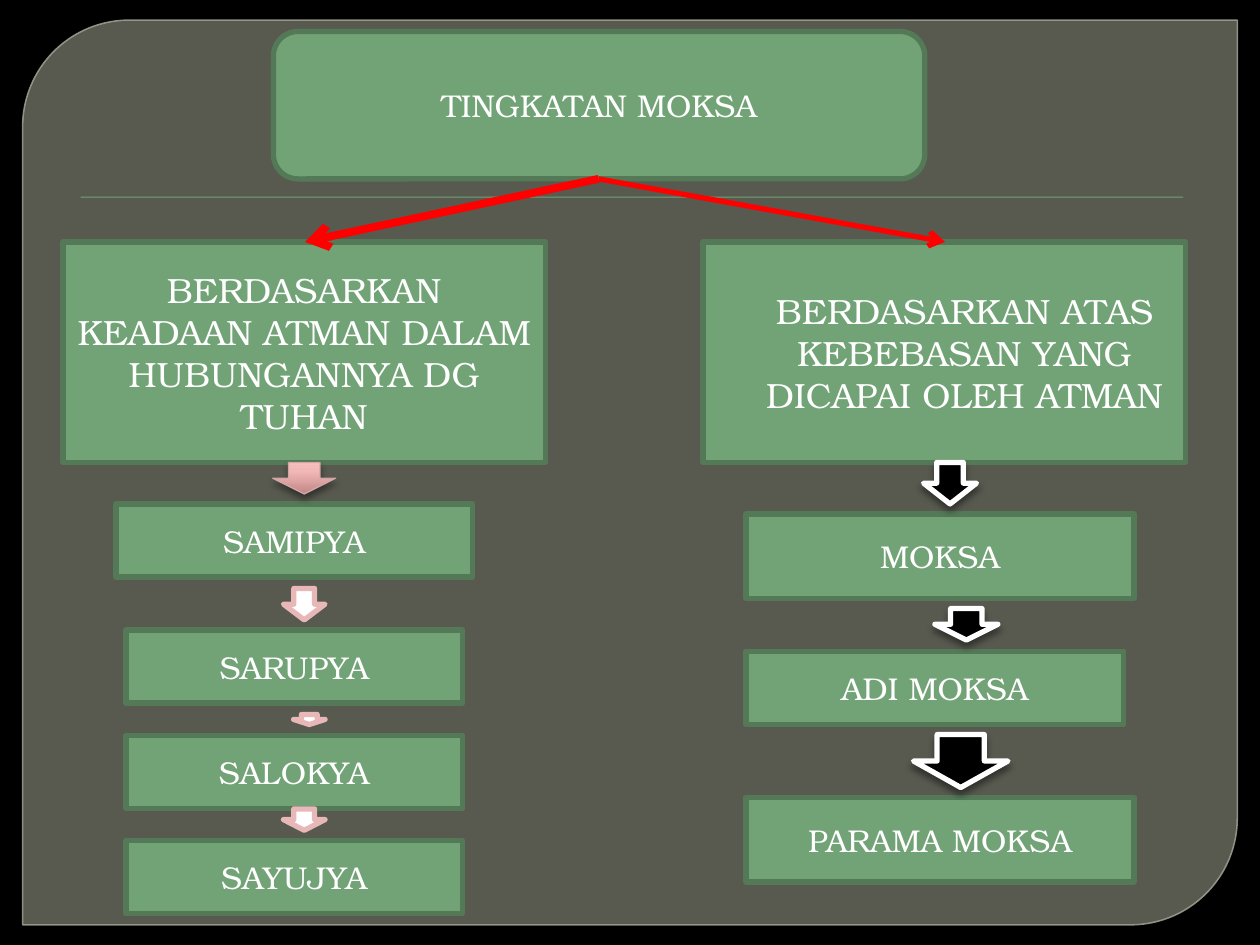
from copy import deepcopy
from dataclasses import dataclass

from pptx import Presentation
from pptx import util as u
from pptx.dml.color import RGBColor
from pptx.enum import shapes, text
from pptx.oxml import ns, xmlchemy

KIND = shapes.MSO_SHAPE


@dataclass(frozen=True)
class Theme:
    """Colours, font and type sizes of the slide."""

    backdrop: str = "000000"
    panel: str = "888B7B"
    panel_edge: str = "9DA090"
    green: str = "72A376"
    green_edge: str = "547957"
    light: str = "FFFFFF"
    dark: str = "000000"
    pink: str = "E8B7B7"
    blush_edge: str = "D3A6A6"
    blush: tuple = ((0, "C18787"), (0.72, "F2B8B8"), (1, "F7BEBE"))
    link: str = "FF0000"
    font: str = "TeX Gyre Bonum"
    heading: int = 20
    body: int = 18


THEME = Theme()


def add_child(parent, tag, **attributes):
    """Append a DrawingML element with attributes and return it."""
    child = xmlchemy.OxmlElement(tag)
    for name, value in attributes.items():
        child.set(name, str(value))
    parent.append(child)
    return child


def set_opacity(fill_parent, percent):
    """Make the solid fill under an element partly transparent."""
    color = fill_parent.find(ns.qn("a:solidFill"))[0]
    add_child(color, "a:alpha", val=percent * 1000)


def add_shadow(shape, opacity, blur, distance):
    """Cast a black shadow straight down; blur and distance are in points."""
    effects = shape.element.spPr.find(ns.qn("a:effectLst"))
    shadow = add_child(effects, "a:outerShdw", blurRad=u.Pt(blur),
                       dist=u.Pt(distance), dir=5400000, rotWithShape=0)
    color = add_child(shadow, "a:srgbClr", val=THEME.dark)
    add_child(color, "a:alpha", val=opacity * 1000)


def add_block(page, kind, box, fill, edge=None, width=3):
    """Draw a filled preset shape in a box given in inches."""
    shape = page.shapes.add_shape(kind, *map(u.Inches, box))
    shape.shadow.inherit = False
    shape.fill.solid()
    shape.fill.fore_color.rgb = RGBColor.from_string(fill)
    if edge:
        shape.line.color.rgb = RGBColor.from_string(edge)
        shape.line.width = u.Pt(width)
    else:
        shape.line.fill.background()
    return shape


def add_label(page, box, words, size=THEME.body, kind=KIND.RECTANGLE, indent=0.0):
    """Draw a green box with centred text."""
    shape = add_block(page, kind, box, THEME.green, THEME.green_edge)
    frame = shape.text_frame
    frame.word_wrap = True
    frame.vertical_anchor = text.MSO_ANCHOR.MIDDLE
    frame.margin_left = u.Inches(0.1 + indent)
    para = frame.paragraphs[0]
    para.text = words
    para.alignment = text.PP_ALIGN.CENTER
    para.font.name = THEME.font
    para.font.size = u.Pt(size)
    para.font.color.rgb = RGBColor.from_string(THEME.light)


def add_link(page, start, end, width):
    """Draw a red arrow between two points given in inches."""
    link = page.shapes.add_connector(shapes.MSO_CONNECTOR.STRAIGHT,
                                     *map(u.Inches, (*start, *end)))
    link.line.color.rgb = RGBColor.from_string(THEME.link)
    link.line.width = u.Pt(width)
    add_child(link.line._get_or_add_ln(), "a:tailEnd", type="arrow")
    add_child(link.element.spPr, "a:effectLst")


def add_blush_arrow(page, box):
    """Draw the down arrow with a pink gradient."""
    arrow = add_block(page, KIND.DOWN_ARROW, box, THEME.pink, THEME.blush_edge, 0.75)
    arrow.fill.gradient()
    arrow.fill.gradient_angle = 90
    stop_list = arrow.element.spPr.find(ns.qn("a:gradFill")).find(ns.qn("a:gsLst"))
    stop_list.append(deepcopy(stop_list[-1]))
    for stop, (position, color) in zip(arrow.fill.gradient_stops, THEME.blush):
        stop.position = position
        stop.color.rgb = RGBColor.from_string(color)
    add_shadow(arrow, 43, 4, 3)


def add_backdrop(page, box):
    """Draw the rounded panel and its rule on a black background."""
    left, top, width, _ = box
    page.background.fill.solid()
    page.background.fill.fore_color.rgb = RGBColor.from_string(THEME.backdrop)
    panel = add_block(page, KIND.ROUND_2_DIAG_RECTANGLE, box,
                      THEME.panel, THEME.panel_edge, 0.87)
    panel.adjustments[0] = 0.118
    panel.adjustments[1] = 0
    set_opacity(panel.element.spPr, 65)
    set_opacity(panel.line._get_or_add_ln(), 88)
    rule = add_block(page, KIND.RECTANGLE,
                     (left + 0.46, top + 1.4, width - 0.89, 0.01), THEME.green)
    add_shadow(rule, 75, 1, 1)


def add_states_column(page, box):
    """Draw the column of states of the atman, linked by pink arrows."""
    left, top, width, _ = box
    add_label(page, box, "BERDASARKAN KEADAAN ATMAN DALAM HUBUNGANNYA DG TUHAN",
              THEME.heading)
    add_label(page, (left + 0.42, top + 2.08, 2.83, 0.58), "SAMIPYA")
    for row, words in enumerate(("SARUPYA", "SALOKYA", "SAYUJYA")):
        add_label(page, (left + 0.5, top + 3.08 + row * 0.835, 2.67, 0.58), words)
    center = left + width / 2
    add_blush_arrow(page, (center - 0.25, top + 1.75, 0.5, 0.25))
    for shift, drop, span, height in ((0, 2.75, 0.33, 0.25),
                                      (0.04, 3.75, 0.25, 0.08),
                                      (0, 4.5, 0.33, 0.17)):
        add_block(page, KIND.DOWN_ARROW,
                  (center + shift - span / 2, top + drop, span, height),
                  THEME.light, THEME.pink)


def add_freedom_column(page, box):
    """Draw the column of degrees of freedom, linked by black arrows."""
    left, top, _, _ = box
    add_label(page, box, "BERDASARKAN ATAS KEBEBASAN YANG DICAPAI OLEH ATMAN",
              THEME.heading, indent=0.32)
    for words, drop, width, height in (("MOKSA", 2.16, 3.08, 0.67),
                                       ("ADI MOKSA", 3.25, 3, 0.58),
                                       ("PARAMA MOKSA", 4.41, 3.08, 0.67)):
        add_label(page, (left + 0.34, top + drop, width, height), words)
    for shift, drop, width, height in ((1.75, 1.75, 0.42, 0.33),
                                       (1.84, 2.91, 0.5, 0.25),
                                       (1.67, 3.91, 0.75, 0.42)):
        arrow = add_block(page, KIND.DOWN_ARROW,
                          (left + shift, top + drop, width, height),
                          THEME.dark, THEME.light)
        add_shadow(arrow, 43, 4, 3)


def main():
    """Build the slide and save the deck."""
    deck = Presentation()
    deck.slide_width, deck.slide_height = u.Inches(10), u.Inches(7.5)
    page = deck.slides.add_slide(deck.slide_layouts[6])
    add_backdrop(page, (0.18, 0.16, 9.64, 7.18))
    add_label(page, (2.17, 0.25, 5.17, 1.17), "TINGKATAN MOKSA",
              kind=KIND.ROUNDED_RECTANGLE)
    add_states_column(page, (0.5, 1.92, 3.83, 1.75))
    add_freedom_column(page, (5.58, 1.92, 3.83, 1.75))
    for end, width in (((2.42, 1.92), 4.5), ((7.5, 1.92), 3)):
        add_link(page, (4.75, 1.42), end, width)
    deck.save("out.pptx")


if __name__ == "__main__":
    main()
